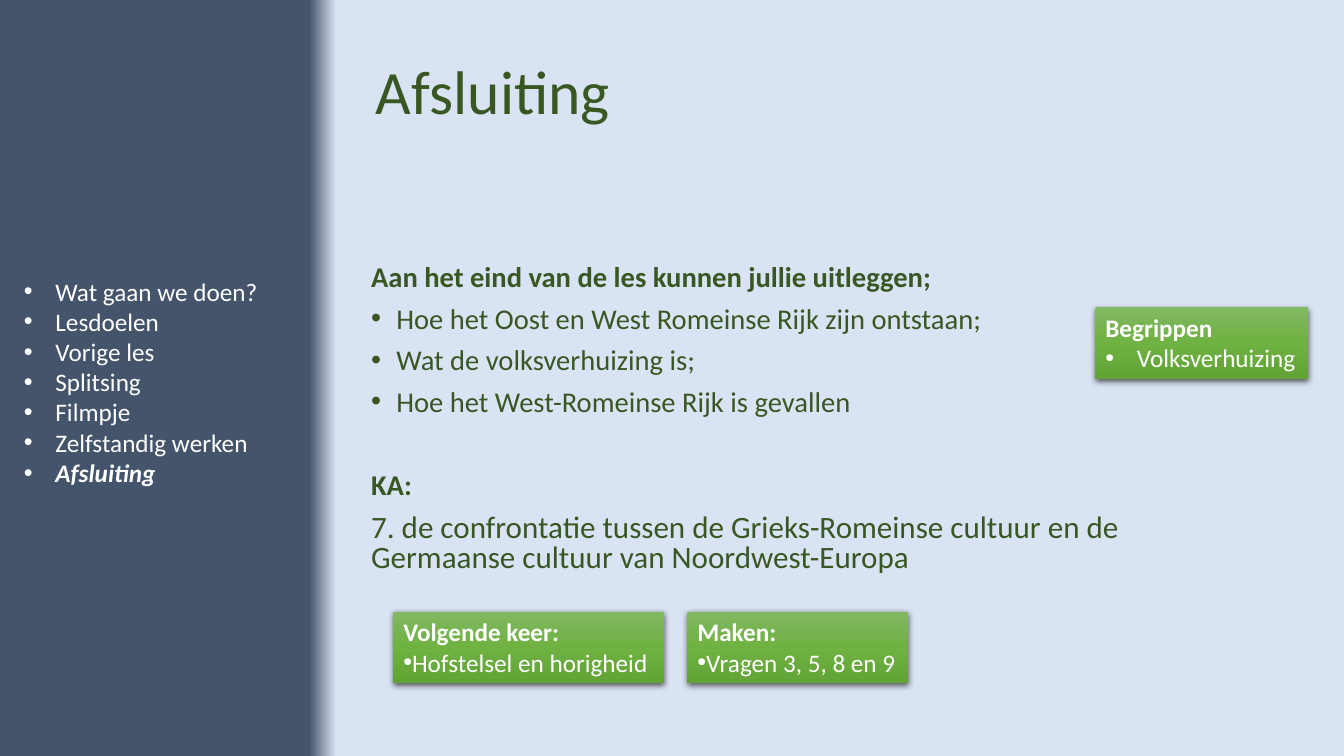
from copy import deepcopy

from lxml import etree
from pptx import Presentation
from pptx.dml.color import RGBColor
from pptx.enum.shapes import MSO_SHAPE
from pptx.enum.text import MSO_ANCHOR, MSO_AUTO_SIZE, PP_ALIGN
from pptx.oxml.ns import qn
from pptx.util import Pt

RECTANGLE = MSO_SHAPE.RECTANGLE
MIDDLE = MSO_ANCHOR.MIDDLE
GROW = MSO_AUTO_SIZE.SHAPE_TO_FIT_TEXT
LEFT = PP_ALIGN.LEFT

COLORS = {
    "sidebar": "44546A", "page": "DAE3F3", "text": "385723", "white": "FFFFFF",
    "card_top": "81B861", "card_middle": "6FB242", "card_bottom": "62A336",
    "shadow": "000000",
}


def rgb(name):
    return RGBColor.from_string(COLORS[name])


def add_line(frame, text, color, size, indent=None, spacing=None, before=0, **font):
    """Add a paragraph; any indent, even 0, gives it a bullet."""
    line = frame.paragraphs[0]
    if line.runs:
        line = frame.add_paragraph()
    formats = {"alignment": LEFT, "line_spacing": spacing, "space_before": Pt(before)}
    for key, value in formats.items():
        setattr(line, key, value)
    run = line.add_run()
    run.text = text
    run.font.color.rgb = rgb(color)
    for key, value in {"name": "Calibri", "size": Pt(size), **font}.items():
        setattr(run.font, key, value)
    if indent is not None:
        properties = line._p.get_or_add_pPr()
        properties.set("marL", str(Pt(indent)))
        properties.set("indent", str(-Pt(indent)))
        etree.SubElement(properties, qn("a:buFont"), typeface="Arial")
        etree.SubElement(properties, qn("a:buChar"), char="•")


deck = Presentation()
deck.slide_width, deck.slide_height = Pt(960), Pt(540)
slide = deck.slides.add_slide(deck.slide_layouts[6])
shapes = slide.shapes

# Background: the sidebar is a sharp step in the gradient
background = slide.background.fill
background.gradient()
background.gradient_angle = 0
for stop, (position, color) in zip(background.gradient_stops,
                                   [(0.23, "sidebar"), (0.25, "page")]):
    stop.position = position
    stop.color.rgb = rgb(color)

# Title
title = shapes.add_textbox(Pt(261.5), Pt(15), Pt(662.5), Pt(104.5)).text_frame
title.word_wrap = True
title.vertical_anchor = MIDDLE
add_line(title, "Afsluiting", "text", 44, spacing=0.9)

# Lesson steps in the sidebar
steps = shapes.add_textbox(Pt(10), Pt(193.5), Pt(183.5), Pt(160)).text_frame
steps.word_wrap = False
steps.auto_size = GROW
for step in ["Wat gaan we doen?", "Lesdoelen", "Vorige les", "Splitsing",
             "Filmpje", "Zelfstandig werken", "Afsluiting"]:
    current = step == "Afsluiting"
    add_line(steps, step, "white", 18, indent=22.5, bold=current, italic=current)

# Learning goals
goals = shapes.add_textbox(Pt(258), Pt(186.5), Pt(569), Pt(258.5)).text_frame
goals.word_wrap = True
for text, size, formats in [
    ("Aan het eind van de les kunnen jullie uitleggen;", 20.4, {"bold": True}),
    ("Hoe het Oost en West Romeinse Rijk zijn ontstaan;", 20.4, {"indent": 18}),
    ("Wat de volksverhuizing is;", 20.4, {"indent": 18}),
    ("Hoe het West-Romeinse Rijk is gevallen", 20.4, {"indent": 18}),
    ("KA:", 20.4, {"bold": True, "before": 39.7}),
    ("7. de confrontatie tussen de Grieks-Romeinse cultuur en de "
     "Germaanse cultuur van Noordwest-Europa", 22.2, {}),
]:
    add_line(goals, text, "text", size, **{"spacing": 0.8, "before": 10, **formats})

# Green cards
for left, top, width, heading, item, indent in [
    (281, 437, 193.5, "Volgende keer:", "Hofstelsel en horigheid", 0),
    (782.5, 219.5, 152, "Begrippen", "Volksverhuizing", 22.5),
    (491, 437, 157.5, "Maken:", "Vragen 3, 5, 8 en 9", 0),
]:
    card = shapes.add_shape(RECTANGLE, Pt(left), Pt(top), Pt(width), Pt(51))
    card.line.fill.background()
    card.fill.gradient()
    card.fill.gradient_angle = 270
    stop_list = card._element.spPr.find(".//" + qn("a:gsLst"))
    stop_list.append(deepcopy(stop_list[-1]))
    for stop, position, color in zip(card.fill.gradient_stops, (0, 0.5, 1),
                                     ("card_top", "card_middle", "card_bottom")):
        stop.position = position
        stop.color.rgb = rgb(color)

    card.shadow.inherit = False
    effects = card._element.spPr.find(qn("a:effectLst"))
    shadow = etree.SubElement(effects, qn("a:outerShdw"), blurRad=str(Pt(4.5)),
                              dist=str(Pt(1.5)), dir="5400000", rotWithShape="0")
    shade = etree.SubElement(shadow, qn("a:srgbClr"), val=COLORS["shadow"])
    etree.SubElement(shade, qn("a:alpha"), val="63000")

    label = card.text_frame
    label.word_wrap = False
    label.auto_size = GROW
    label.vertical_anchor = MSO_ANCHOR.TOP
    add_line(label, heading, "white", 18, bold=True)
    add_line(label, item, "white", 18, indent=indent)

deck.save("out.pptx")
